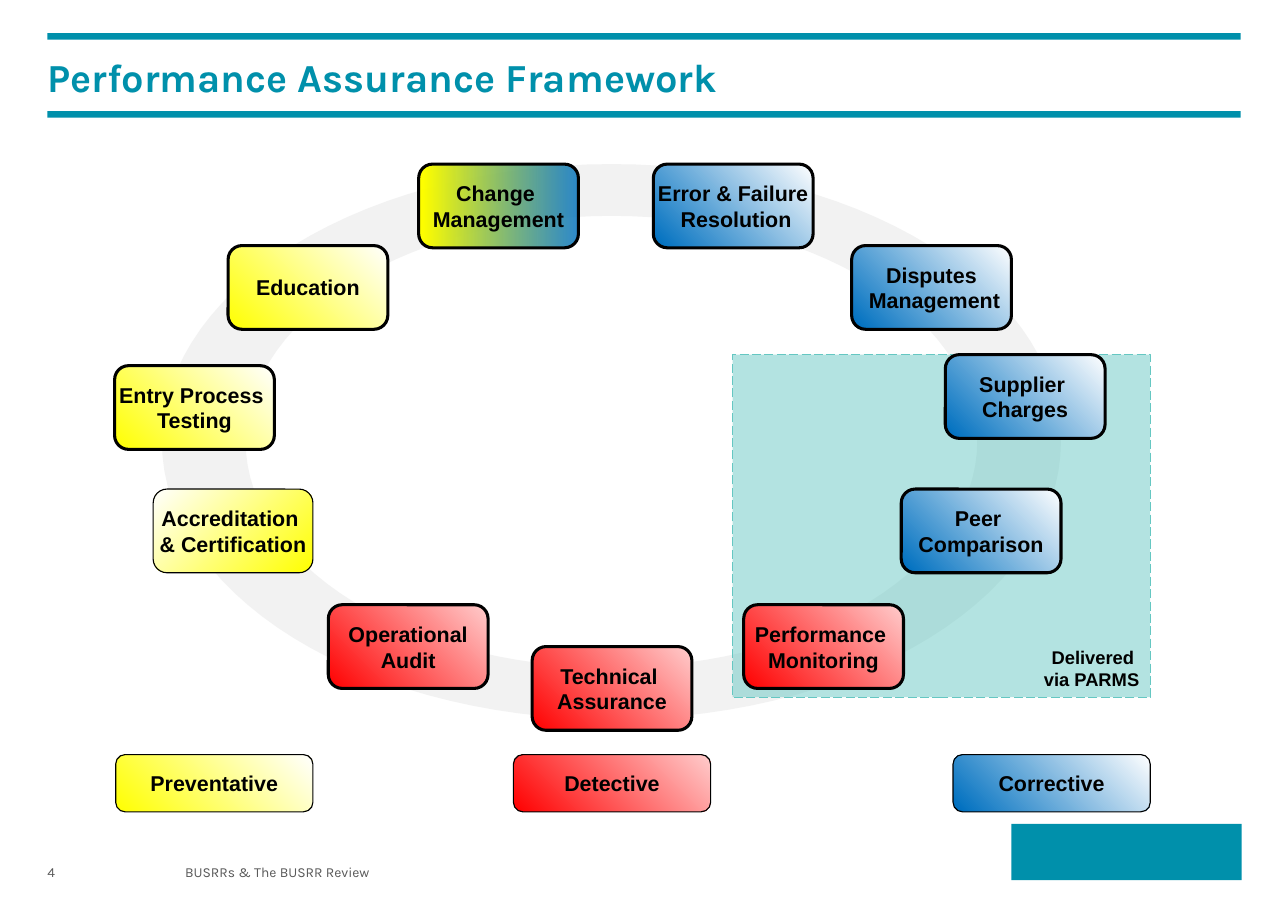
import math
from dataclasses import dataclass

import pptx
import pptx.dml.color
import pptx.enum.dml
import pptx.enum.shapes
import pptx.enum.text
import pptx.oxml
import pptx.oxml.ns
import pptx.util

Inches = pptx.util.Inches
Pt = pptx.util.Pt
MSO_SHAPE = pptx.enum.shapes.MSO_SHAPE
PP_ALIGN = pptx.enum.text.PP_ALIGN
MSO_ANCHOR = pptx.enum.text.MSO_ANCHOR
TEAL = "0090AB"
GREY = "595959"
BLACK = "000000"


@dataclass
class Gradient:
    start: str
    end: str
    angle: int = 45
    offset: float = 0
    end_alpha: int = 100


@dataclass
class Card:
    text: str
    left: float
    top: float
    gradient: Gradient
    width: float = 1.45
    height: float = 0.76
    line: float = 2


@dataclass
class Label:
    text: str
    left: float
    top: float
    width: float
    height: float


YELLOW = Gradient("FFFF00", "FFFFFF")
YELLOW_LEFT = Gradient("FFFF00", "FFFFFF", angle=135)
RED = Gradient("FF0000", "FFCCCC")
BLUE = Gradient("0070C0", "FFFFFF", offset=0.03)
YELLOW_BLUE = Gradient("FFFF00", "0070C0", angle=0, offset=0.03, end_alpha=82)

LEGEND = [
    Card(text, left, 6.85, gradient, 1.79, 0.52, 0.75)
    for text, left, gradient in [
        ("Preventative", 1.05, YELLOW),
        ("Detective", 4.66, RED),
        ("Corrective", 8.65, BLUE),
    ]
]
TECHNIQUES = [
    Card("Education", 2.07, 2.23, YELLOW),
    Card("Accreditation \n& Certification", 1.39, 4.44, YELLOW_LEFT, line=0.75),
    Card("Error & Failure\n Resolution", 5.93, 1.49, BLUE),
    Card("Operational\nAudit", 2.98, 5.49, RED),
    Card("Change \nManagement", 3.8, 1.49, YELLOW_BLUE),
    Card("Disputes\n Management", 7.73, 2.23, BLUE),
    Card("Technical \nAssurance", 4.83, 5.87, RED),
    Card("Entry Process \nTesting", 1.04, 3.32, YELLOW),
    Card("Peer \nComparison", 8.18, 4.44, BLUE),
    Card("Supplier \nCharges", 8.58, 3.22, BLUE),
    Card("Performance \nMonitoring", 6.75, 5.49, RED),
]
FOOTERS = [
    Label("BUSRRs & The BUSRR Review", 1.68, 7.84, 6.89, 0.2),
    Label("4", 0.43, 7.84, 1.08, 0.2),
]


def rgb(color: str) -> pptx.dml.color.RGBColor:
    return pptx.dml.color.RGBColor.from_string(color)


def set_alpha(sp, color: str, percent: int) -> None:
    for clr in sp._element.spPr.iter(pptx.oxml.ns.qn("a:srgbClr")):
        if clr.get("val") == color:
            alpha = pptx.oxml.parse_xml(
                f'<a:alpha {pptx.oxml.ns.nsdecls("a")} val="{percent * 1000}"/>'
            )
            clr.append(alpha)


def format_text(tf, size: float, font: str, color: str, bold: bool, align) -> None:
    for p in tf.paragraphs:
        p.alignment = align
        for r in p.runs:
            r.font.size = Pt(size)
            r.font.name = font
            r.font.bold = bold
            r.font.color.rgb = rgb(color)


def clear_margins(tf) -> None:
    tf.margin_left = tf.margin_top = tf.margin_right = tf.margin_bottom = 0


def add_block(slide, kind, left: float, top: float, width: float, height: float):
    sp = slide.shapes.add_shape(
        kind, Inches(left), Inches(top), Inches(width), Inches(height)
    )
    sp.shadow.inherit = False
    return sp


def add_bar(slide, left: float, top: float, width: float, height: float, color: str):
    sp = add_block(slide, MSO_SHAPE.RECTANGLE, left, top, width, height)
    sp.fill.solid()
    sp.fill.fore_color.rgb = rgb(color)
    sp.line.fill.background()
    return sp


def add_card(slide, card: Card) -> None:
    sp = add_block(slide, MSO_SHAPE.FLOWCHART_ALTERNATE_PROCESS,
                   card.left, card.top, card.width, card.height)
    gradient = card.gradient
    sp.fill.gradient()
    sp.fill.gradient_angle = gradient.angle
    first, last = sp.fill.gradient_stops
    first.color.rgb, first.position = rgb(gradient.start), gradient.offset
    last.color.rgb, last.position = rgb(gradient.end), 1
    if gradient.end_alpha < 100:
        set_alpha(sp, gradient.end, gradient.end_alpha)
    sp.line.color.rgb = rgb(BLACK)
    sp.line.width = Pt(card.line)
    tf = sp.text_frame
    tf.text = card.text
    tf.word_wrap = False
    tf.vertical_anchor = MSO_ANCHOR.MIDDLE
    format_text(tf, 14, "Arial", BLACK, True, PP_ALIGN.CENTER)


def add_label(slide, label: Label):
    sp = slide.shapes.add_textbox(
        Inches(label.left), Inches(label.top), Inches(label.width), Inches(label.height)
    )
    sp.text_frame.text = label.text
    return sp.text_frame


def ellipse(rx: float, ry: float, steps: int) -> list[tuple[float, float]]:
    angles = [2 * math.pi * i / abs(steps) for i in range(abs(steps))]
    sign = math.copysign(1, steps)
    return [
        (Inches(5.55 + rx * math.cos(a)), Inches(4.01 + sign * ry * math.sin(a)))
        for a in angles
    ]


def add_ring(slide) -> None:
    outer, inner = ellipse(4.08, 2.52, 120), ellipse(3.32, 2.05, -120)
    builder = slide.shapes.build_freeform(*outer[0])
    builder.add_line_segments(outer[1:], close=True)
    builder.move_to(*inner[0])
    builder.add_line_segments(inner[1:], close=True)
    sp = builder.convert_to_shape()
    sp.shadow.inherit = False
    sp.fill.solid()
    sp.fill.fore_color.rgb = rgb("F2F2F2")
    sp.line.fill.background()


def add_title(slide) -> None:
    sp = slide.shapes.title
    sp.left, sp.top = Inches(0.43), Inches(0.46)
    sp.width, sp.height = Inches(10.83), Inches(0.47)
    tf = sp.text_frame
    tf.text = "Performance Assurance Framework"
    tf.auto_size = pptx.enum.text.MSO_AUTO_SIZE.NONE
    tf.vertical_anchor = MSO_ANCHOR.MIDDLE
    clear_margins(tf)
    format_text(tf, 26, "Karla", TEAL, True, PP_ALIGN.LEFT)


def add_parms_zone(slide) -> None:
    sp = add_bar(slide, 6.65, 3.22, 3.79, 3.11, "65C7C2")
    set_alpha(sp, "65C7C2", 49)
    sp.line.color.rgb = rgb("65C7C2")
    sp.line.width = Pt(0.75)
    sp.line.dash_style = pptx.enum.dml.MSO_LINE.LONG_DASH
    tf = add_label(slide, Label("Delivered \nvia PARMS", 9.36, 5.82, 1.08, 0.51))
    tf.word_wrap = False
    format_text(tf, 12, "Arial", BLACK, True, PP_ALIGN.RIGHT)


def main() -> None:
    prs = pptx.Presentation()
    prs.slide_width, prs.slide_height = Inches(11.69), Inches(8.27)
    slide = prs.slides.add_slide(prs.slide_layouts[5])
    add_title(slide)
    for top in (0.3, 1.01):
        add_bar(slide, 0.43, top, 10.83, 0.06, TEAL)
    add_bar(slide, 9.18, 7.48, 2.09, 0.51, TEAL)
    add_ring(slide)
    add_parms_zone(slide)
    for card in LEGEND + TECHNIQUES:
        add_card(slide, card)
    for footer in FOOTERS:
        tf = add_label(slide, footer)
        tf.word_wrap = True
        clear_margins(tf)
        format_text(tf, 9, "Karla", GREY, False, PP_ALIGN.LEFT)
    prs.save("out.pptx")


if __name__ == "__main__":
    main()
